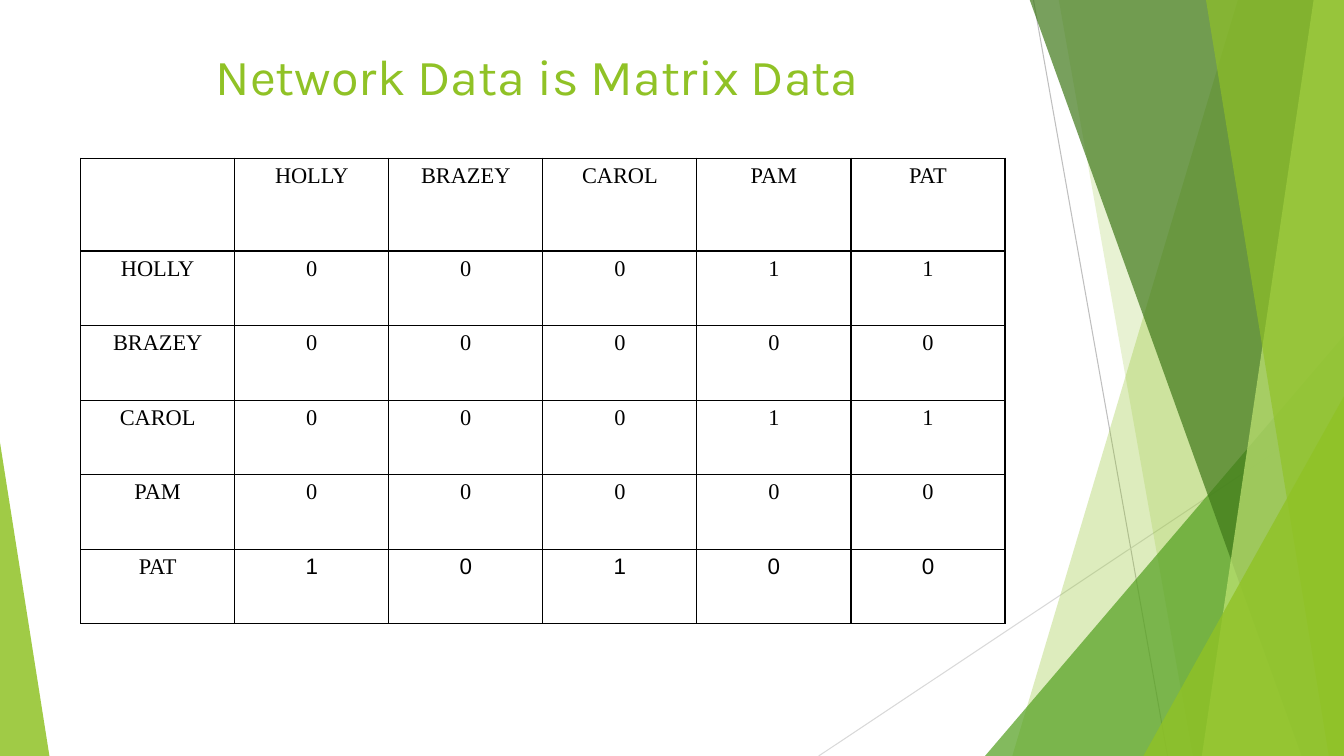
from lxml.etree import SubElement
from pptx import Presentation
from pptx.dml.color import RGBColor
from pptx.enum.shapes import MSO_CONNECTOR, MSO_SHAPE
from pptx.enum.text import MSO_ANCHOR, PP_ALIGN
from pptx.oxml.ns import qn
from pptx.util import Inches, Pt

COLORS = {
    "lime": "90C226", "green": "54A021", "forest": "3F7819", "pale": "C0E474",
    "gray": "BFBFBF", "silver": "D9D9D9", "black": "000000",
}
WIDE, HIGH, TOP = 13.33, 7.5, -0.01
NAMES = ["HOLLY", "BRAZEY", "CAROL", "PAM", "PAT"]
TIES = ["00011", "00000", "00011", "00000", "10100"]


def rgb(name):
    return RGBColor.from_string(COLORS[name])


def tint(shape, color, alpha):
    """Fill a shape with a see-through colour, alpha in percent."""
    shape.shadow.inherit = False
    shape.line.fill.background()
    shape.fill.solid()
    shape.fill.fore_color.rgb = rgb(color)
    mark = shape.fill._xPr.find(".//" + qn("a:srgbClr"))
    SubElement(mark, qn("a:alpha"), val=str(alpha * 1000))


def add_band(slide, head, foot, color, alpha):
    """Draw a band from a slanted left edge to the right side of the slide."""
    spots = [(WIDE, TOP), (WIDE, HIGH), (foot, HIGH)]
    build = slide.shapes.build_freeform(Inches(head), Inches(TOP))
    build.add_line_segments([(Inches(x), Inches(y)) for x, y in spots])
    tint(build.convert_to_shape(), color, alpha)


def add_wedge(slide, left, top, width, apex, color, alpha):
    """Draw a right triangle standing on the bottom edge of the slide."""
    box = [Inches(n) for n in (left, top, width, HIGH - top)]
    shape = slide.shapes.add_shape(MSO_SHAPE.ISOSCELES_TRIANGLE, *box)
    shape.adjustments[0] = apex
    tint(shape, color, alpha)


def add_line(slide, ends, color):
    line = slide.shapes.add_connector(
        MSO_CONNECTOR.STRAIGHT, *[Inches(n) for n in ends])
    line.line.color.rgb = rgb(color)
    line.line.width = Pt(0.75)
    SubElement(line._element.spPr, qn("a:effectLst"))


def write(frame, text, color, **form):
    para = frame.paragraphs[0]
    para.alignment = PP_ALIGN.CENTER
    run = para.add_run()
    run.text = text
    run.font.color.rgb = rgb(color)
    for key, value in form.items():
        setattr(run.font, key, value)


def add_title(slide, text):
    box = slide.shapes.add_textbox(
        Inches(0.83), Inches(0.4), Inches(9), Inches(1.25))
    form = {"word_wrap": True, "vertical_anchor": MSO_ANCHOR.TOP}
    for key, value in form.items():
        setattr(box.text_frame, key, value)
    write(box.text_frame, text, "lime", name="Karla", size=Pt(36))


def rule(cell):
    """Give a cell black borders and no fill."""
    props = cell._tc.get_or_add_tcPr()
    for side in ("lnL", "lnR", "lnT", "lnB"):
        edge = SubElement(props, qn("a:" + side), w=str(Pt(1)))
        fill = SubElement(edge, qn("a:solidFill"))
        SubElement(fill, qn("a:srgbClr"), val=COLORS["black"])
    cell.fill.background()


def add_matrix(slide):
    rows = [["", *NAMES]] + [[n, *ties] for n, ties in zip(NAMES, TIES)]
    count = len(rows)
    table = slide.shapes.add_table(
        count, count, Inches(0.8), Inches(1.57), Inches(9.17), Inches(4.62)).table
    for flag in ("first_row", "horz_banding"):
        setattr(table, flag, False)
    for r, row in enumerate(rows):
        table.rows[r].height = Inches(0.74 if r else 0.92)
        for c, text in enumerate(row):
            cell = table.cell(r, c)
            rule(cell)
            last = r == count - 1 and c > 0
            font = "Arial" if last else "Times New Roman"
            if text:
                write(cell.text_frame, text, "black", name=font, size=Pt(16))


def main():
    deck = Presentation()
    deck.slide_width, deck.slide_height = Inches(WIDE), Inches(HIGH)
    slide = deck.slides.add_slide(deck.slide_layouts[6])
    add_line(slide, (10.25, 0, 11.58, HIGH), "gray")
    add_line(slide, (WIDE, 4.03, 8.12, HIGH), "silver")
    add_band(slide, 12.28, 10.04, "lime", 30)
    add_band(slide, 10.5, 11.83, "lime", 20)
    add_wedge(slide, 9.77, 3.33, 3.56, 1, "green", 72)
    add_band(slide, 10.21, 12.91, "forest", 70)
    add_band(slide, 13.03, 11.92, "pale", 70)
    add_band(slide, 11.96, 13.18, "lime", 65)
    add_wedge(slide, 11.34, 3.93, 1.99, 1, "lime", 80)
    add_wedge(slide, 0, 4.39, 0.49, 0, "lime", 85)
    add_title(slide, "Network Data is Matrix Data")
    add_matrix(slide)
    deck.save("out.pptx")


if __name__ == "__main__":
    main()
